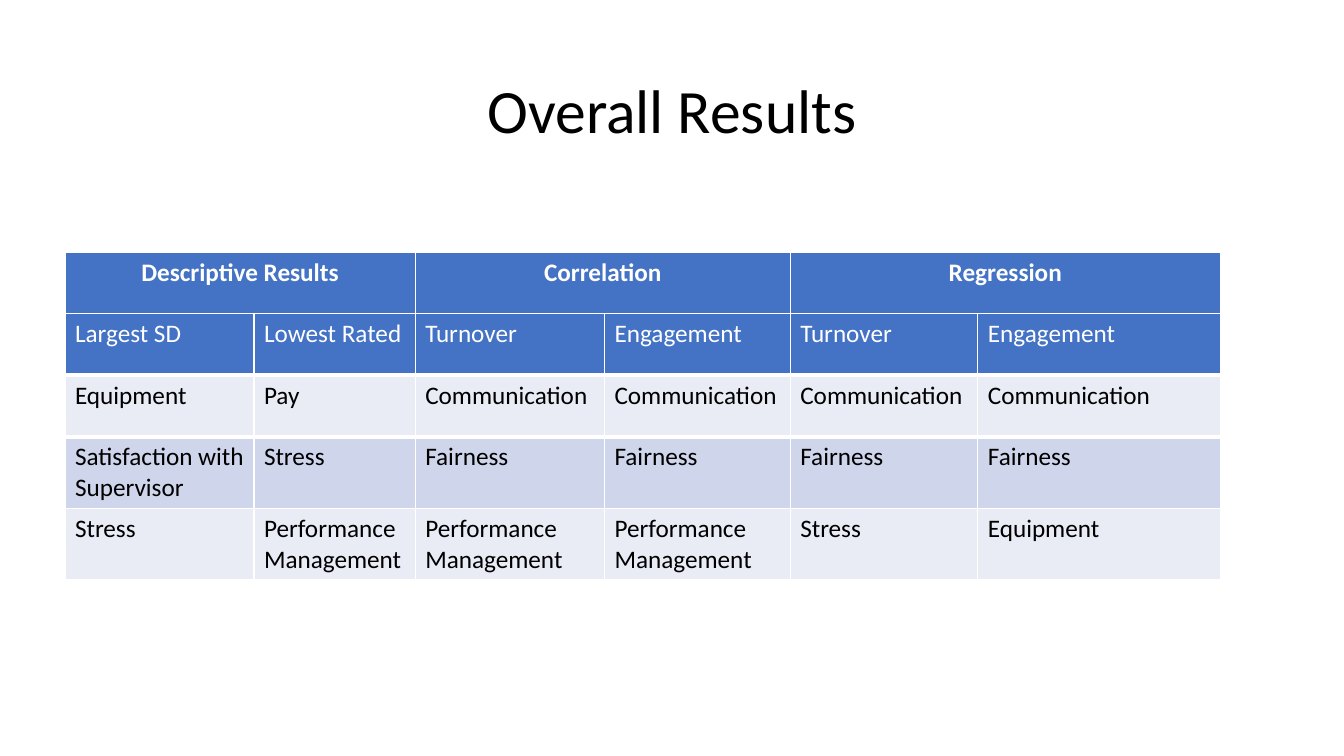
from lxml import etree
from pptx import Presentation
from pptx.dml.color import RGBColor
from pptx.enum.text import MSO_ANCHOR, PP_ALIGN
from pptx.oxml.ns import qn
from pptx.util import Pt

CENTER = PP_ALIGN.CENTER
LEFT = PP_ALIGN.LEFT
MIDDLE = MSO_ANCHOR.MIDDLE

FONT = "Calibri"
COLORS = {
    "white": "FFFFFF",
    "black": "000000",
    "header": "4472C4",
    "light band": "E9EBF5",
    "dark band": "CFD5EA",
}
ROW_FILLS = ["header", "header", "light band", "dark band", "light band"]
COLUMN_WIDTHS = [135, 115.2, 135.2, 132.7, 134, 173.2]
ROW_HEIGHTS = [44, 44, 44, 51, 51]
THICK_EDGES = [1, 2]

ANALYSES = ["Descriptive Results", "Correlation", "Regression"]
RESULTS = [
    ["Largest SD", "Lowest Rated", "Turnover", "Engagement", "Turnover", "Engagement"],
    ["Equipment", "Pay"] + ["Communication"] * 4,
    ["Satisfaction with Supervisor", "Stress"] + ["Fairness"] * 4,
    ["Stress"] + ["Performance Management"] * 3 + ["Stress", "Equipment"],
]


def color(name):
    return RGBColor.from_string(COLORS[name])


def write(frame, text, size, color_name, align=LEFT, bold=False):
    frame.text = text
    para = frame.paragraphs[0]
    para.alignment = align
    span = para.runs[0]
    span.font.name = FONT
    span.font.size = Pt(size)
    span.font.bold = bold
    span.font.color.rgb = color(color_name)


def add_title(page, text):
    box = page.shapes.title
    box.left, box.top, box.width, box.height = Pt(66), Pt(28.8), Pt(828), Pt(104.4)
    box.text_frame.vertical_anchor = MIDDLE
    write(box.text_frame, text, 44, "black", CENTER)
    box.text_frame.paragraphs[0].line_spacing = 0.9


def set_borders(cell, top, bottom):
    properties = cell._tc.get_or_add_tcPr()
    widths = {"a:lnL": 1, "a:lnR": 1, "a:lnT": top, "a:lnB": bottom}
    for position, (tag, width) in enumerate(widths.items()):
        line = etree.Element(qn(tag), w=str(Pt(width)))
        fill = etree.SubElement(line, qn("a:solidFill"))
        etree.SubElement(fill, qn("a:srgbClr"), val=COLORS["white"])
        properties.insert(position, line)


def style_cell(cell, row):
    cell.fill.solid()
    cell.fill.fore_color.rgb = color(ROW_FILLS[row])
    top = 3 if row - 1 in THICK_EDGES else 1
    bottom = 3 if row in THICK_EDGES else 1
    set_borders(cell, top, bottom)


def add_results_table(page):
    frame = page.shapes.add_table(
        len(ROW_HEIGHTS), len(COLUMN_WIDTHS), Pt(46.4), Pt(180),
        Pt(sum(COLUMN_WIDTHS)), Pt(sum(ROW_HEIGHTS)))
    table = frame.table
    for column, width in zip(table.columns, COLUMN_WIDTHS):
        column.width = Pt(width)
    for row, height in zip(table.rows, ROW_HEIGHTS):
        row.height = Pt(height)
    for row in range(len(ROW_HEIGHTS)):
        for column in range(len(COLUMN_WIDTHS)):
            style_cell(table.cell(row, column), row)
    for index, analysis in enumerate(ANALYSES):
        cell = table.cell(0, 2 * index)
        cell.merge(table.cell(0, 2 * index + 1))
        write(cell.text_frame, analysis, 18, "white", CENTER, bold=True)
    for row, values in enumerate(RESULTS, start=1):
        text_color = "white" if ROW_FILLS[row] == "header" else "black"
        for column, value in enumerate(values):
            write(table.cell(row, column).text_frame, value, 18, text_color)


def main():
    deck = Presentation()
    deck.slide_width, deck.slide_height = Pt(960), Pt(540)
    page = deck.slides.add_slide(deck.slide_layouts.get_by_name("Title Only"))
    add_title(page, "Overall Results")
    add_results_table(page)
    deck.save("out.pptx")


if __name__ == "__main__":
    main()
